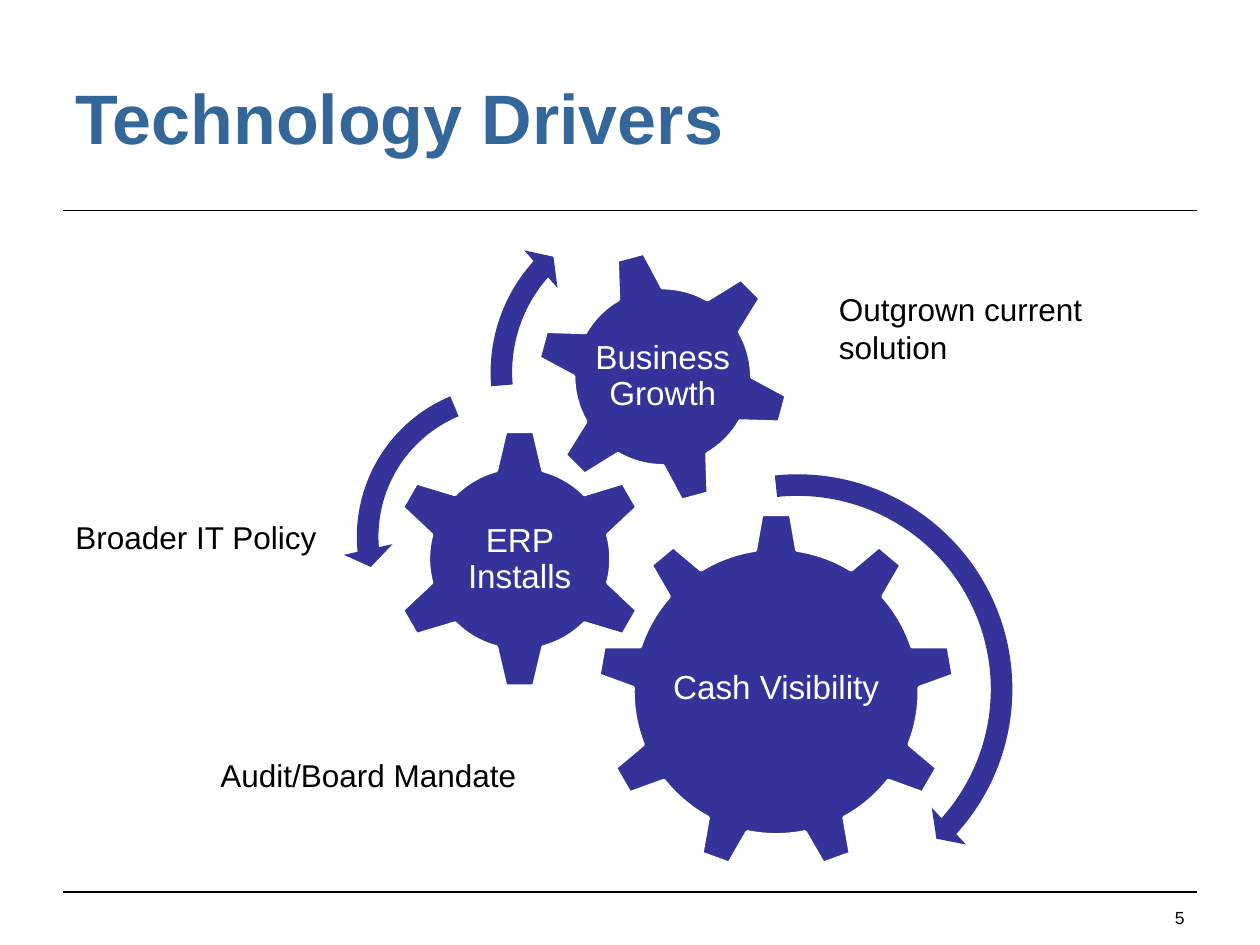
from pptx import Presentation
from pptx import util as u
from pptx.dml.color import RGBColor
from pptx.enum import shapes, text
from pptx.oxml.ns import qn
from lxml import etree

SCALE = 9144  # EMU per px, at 100 px to the inch
COLORS = {"title": "336699", "gear": "333399", "white": "FFFFFF", "black": "000000"}
FONT = "Arial"


def px(length):
    return u.Emu(length * SCALE)


class SlideBuilder:
    def __init__(self, slide):
        self.slide = slide

    def color(self, name):
        return RGBColor.from_string(COLORS[name])

    def rule(self, left, right, y):
        line = self.slide.shapes.add_connector(
            shapes.MSO_CONNECTOR.STRAIGHT, px(left), px(y), px(right), px(y))
        line.line.color.rgb = self.color("black")
        line.line.width = u.Pt(1)
        etree.SubElement(line._element.spPr, qn("a:effectLst"))

    def label(self, box, words, size, color="black", bold=False,
              align="LEFT", anchor="TOP", inset=None, spacing=None):
        shape = self.slide.shapes.add_textbox(*map(px, box))
        frame = shape.text_frame
        frame.word_wrap = True
        frame.vertical_anchor = text.MSO_ANCHOR[anchor]
        if inset is not None:
            frame.margin_left = frame.margin_right = px(inset)
            frame.margin_top = frame.margin_bottom = px(inset)
        paragraph = frame.paragraphs[0]
        paragraph.alignment = text.PP_ALIGN[align]
        if spacing:
            paragraph.line_spacing = spacing
        run = paragraph.add_run()
        run.text = words
        run.font.name = FONT
        run.font.size = u.Pt(size)
        run.font.bold = bold
        run.font.color.rgb = self.color(color)

    def solid(self, kind, left, top, size):
        shape = self.slide.shapes.add_shape(kind, px(left), px(top), px(size), px(size))
        shape.shadow.inherit = False
        shape.fill.solid()
        shape.fill.fore_color.rgb = self.color("gear")
        shape.line.fill.background()
        return shape

    def gear(self, kind, left, top, size, text_box, words, rotation=0):
        shape = self.solid(kind, left, top, size)
        shape.rotation = rotation
        shape.line.color.rgb = self.color("white")
        shape.line.width = u.Pt(2)
        self.label(text_box, words, 19, "white", align="CENTER",
                   anchor="MIDDLE", inset=3, spacing=0.9)

    def arc_arrow(self, kind, left, top, size, band, head_angle, end, start, head):
        """Band and head widths are percentages, the angles are degrees."""
        shape = self.solid(kind, left, top, size)
        values = [band / 100, head_angle * 0.6, end * 0.6, start * 0.6, head / 100]
        for index, value in enumerate(values):
            shape.adjustments[index] = value


def main():
    presentation = Presentation()
    presentation.slide_width, presentation.slide_height = px(1000), px(750)
    slide = presentation.slides.add_slide(presentation.slide_layouts[6])
    builder = SlideBuilder(slide)
    kinds = shapes.MSO_SHAPE

    # Rules and title
    for y in (167, 708):
        builder.rule(50, 950, y)
    builder.label((50, 30, 708, 125), "Technology Drivers", 40, "title",
                  bold=True, anchor="MIDDLE")

    # Gears with their captions
    builder.gear(kinds.GEAR_9, 474, 407, 284, (531, 474, 170, 146), "Cash Visibility")
    builder.gear(kinds.GEAR_6, 309, 340, 207, (361, 393, 103, 102), "ERP Installs")
    builder.gear(kinds.GEAR_6, 425, 198, 202, (469, 242, 114, 114), "Business Growth",
                 rotation=345)

    # Turning arrows
    builder.arc_arrow(kinds.CIRCULAR_ARROW, 451, 365, 364, 4.7, 4.98, 42.13, 263.95, 5.5)
    builder.arc_arrow(kinds.LEFT_CIRCULAR_ARROW, 272, 294, 264,
                      6.5, 7.17, 174.82, 247.3, 7.5)
    builder.arc_arrow(kinds.CIRCULAR_ARROW, 378, 153, 285, 6, 6.57, 221.9, 175.14, 7)

    # Side notes and page number
    builder.label((900, 715, 50, 35), "5", 10, align="RIGHT")
    for left, top, height, words in (
            (656, 225, 71, "Outgrown current solution"),
            (165, 595, 40, "Audit/Board Mandate"),
            (50, 406, 40, "Broader IT Policy")):
        builder.label((left, top, 279, height), words, 18)

    presentation.save("out.pptx")


if __name__ == "__main__":
    main()
